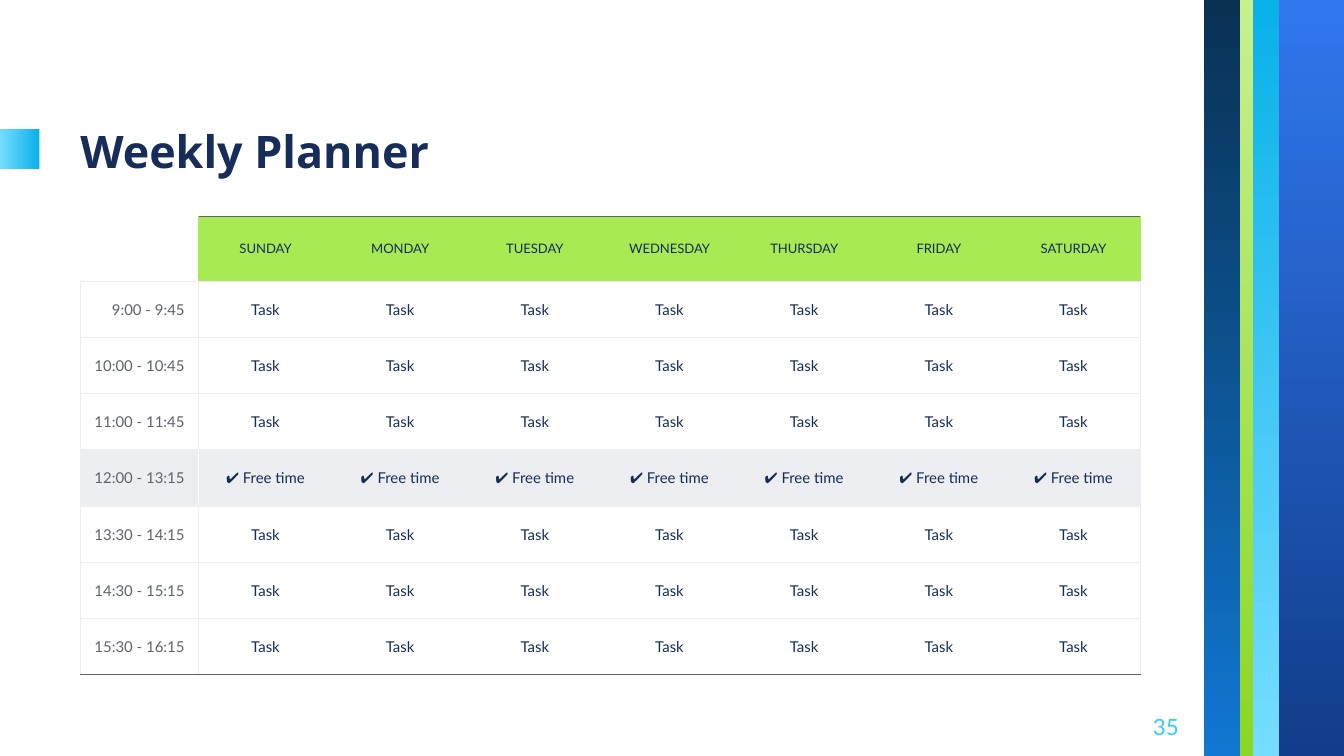
from dataclasses import dataclass

from lxml import etree
from pptx import Presentation
from pptx.dml.color import RGBColor
from pptx.enum.shapes import MSO_SHAPE
from pptx.enum.text import MSO_ANCHOR, PP_ALIGN
from pptx.oxml.ns import qn
from pptx.util import Pt

RECT = MSO_SHAPE.RECTANGLE
LEFT, CENTER, RIGHT = PP_ALIGN.LEFT, PP_ALIGN.CENTER, PP_ALIGN.RIGHT
MIDDLE, BOTTOM = MSO_ANCHOR.MIDDLE, MSO_ANCHOR.BOTTOM

DAYS = ["SUNDAY", "MONDAY", "TUESDAY", "WEDNESDAY",
        "THURSDAY", "FRIDAY", "SATURDAY"]
TIMES = ["9:00 - 9:45", "10:00 - 10:45", "11:00 - 11:45", "12:00 - 13:15",
         "13:30 - 14:15", "14:30 - 15:15", "15:30 - 16:15"]
BREAK_TIME = "12:00 - 13:15"


@dataclass(frozen=True)
class Theme:
    navy: str = "162D5A"
    grey: str = "5E626B"
    pale: str = "EDEEF1"
    white: str = "FFFFFF"
    green: str = "A7EA52"
    cyan: str = "33CCFF"
    blue_fade: tuple = ("3177EE", "113D8A")
    cyan_fade: tuple = ("75DDFF", "09B1E9")
    green_fade: tuple = ("C6F18D", "8AD824")
    deep_fade: tuple = ("1077D2", "093153")
    heading_font: str = "Noto Sans"
    body_font: str = "Lato"
    title_size: float = 24
    number_size: float = 12
    cell_size: float = 8
    day_size: float = 7
    inset: float = 7.2
    rule: float = 0.75


def write(tf, text, *, font, size, color, bold=False, align=LEFT):
    p = tf.paragraphs[0]
    p.alignment = align
    p.font.size = Pt(size)
    if not text:
        return
    r = p.add_run()
    r.text = text
    r.font.name = font
    r.font.size = Pt(size)
    r.font.bold = bold
    r.font.color.rgb = RGBColor.from_string(color)


def set_borders(cell, width, colors):
    """Draw the left, right, top and bottom borders; None hides one."""
    tcPr = cell._tc.get_or_add_tcPr()
    for i, (side, color) in enumerate(zip("LRTB", colors)):
        ln = etree.Element(qn(f"a:ln{side}"), w=str(Pt(width)))
        if color:
            fill = etree.SubElement(ln, qn("a:solidFill"))
            etree.SubElement(fill, qn("a:srgbClr"), val=color)
        else:
            etree.SubElement(ln, qn("a:noFill"))
        tcPr.insert(i, ln)


class Planner:
    def __init__(self, slide, theme):
        self.s = slide
        self.theme = theme

    def bar(self, x, y, w, h, fade, rotation=0):
        """Add a rectangle that fades from top to bottom before rotation."""
        sp = self.s.shapes.add_shape(RECT, Pt(x), Pt(y), Pt(w), Pt(h))
        sp.rotation = rotation
        sp.shadow.inherit = False
        sp.line.fill.background()
        sp.fill.gradient()
        sp.fill.gradient_angle = 270
        for stop, color, position in zip(sp.fill.gradient_stops, fade, (0, 1)):
            stop.color.rgb = RGBColor.from_string(color)
            stop.position = position

    def text(self, x, y, w, h, text, anchor, **style):
        tf = self.s.shapes.add_textbox(Pt(x), Pt(y), Pt(w), Pt(h)).text_frame
        tf.word_wrap = True
        tf.vertical_anchor = anchor
        tf.margin_left = tf.margin_right = Pt(self.theme.inset)
        tf.margin_top = tf.margin_bottom = Pt(self.theme.inset)
        write(tf, text, **style)

    def cell(self, cell, text, fill, borders, **style):
        t = self.theme
        cell.vertical_anchor = MIDDLE
        cell.margin_left = cell.margin_right = Pt(t.inset)
        cell.margin_top = cell.margin_bottom = Pt(t.inset)
        write(cell.text_frame, text, font=t.body_font, **style)
        if fill:
            cell.fill.solid()
            cell.fill.fore_color.rgb = RGBColor.from_string(fill)
        else:
            cell.fill.background()
        set_borders(cell, t.rule, borders)

    def table(self, x, y, widths, heights):
        t = self.theme
        frame = self.s.shapes.add_table(len(heights), len(widths), Pt(x), Pt(y),
                                        Pt(sum(widths)), Pt(sum(heights)))
        table = frame.table
        table.first_row = table.horz_banding = False
        for column, width in zip(table.columns, widths):
            column.width = Pt(width)
        for row, height in zip(table.rows, heights):
            row.height = Pt(height)

        last = len(widths) - 1
        for c, day in enumerate([""] + DAYS):
            borders = (t.green if c == 1 else None,
                       t.green if c in (0, last) else None,
                       t.grey if c else None, t.pale)
            self.cell(table.cell(0, c), day, t.green if c else None, borders,
                      size=t.day_size, color=t.navy, align=CENTER)

        for r, time in enumerate(TIMES, start=1):
            is_break = time == BREAK_TIME
            fill = t.pale if is_break else None
            divider = t.white if is_break else t.pale
            bottom = t.grey if r == len(TIMES) else t.pale
            entry = "✔ Free time" if is_break else "Task"
            self.cell(table.cell(r, 0), time, fill,
                      (t.pale, divider, t.pale, bottom),
                      size=t.cell_size, color=t.grey, align=RIGHT)
            for c in range(1, last + 1):
                borders = (divider if c == 1 else None,
                           t.pale if c == last else None, t.pale, bottom)
                self.cell(table.cell(r, c), entry, fill, borders,
                          size=t.cell_size, color=t.navy, align=CENTER)


def main():
    prs = Presentation()
    prs.slide_width, prs.slide_height = Pt(720), Pt(405)
    theme = Theme()
    planner = Planner(prs.slides.add_slide(prs.slide_layouts[6]), theme)

    planner.bar(685, 0, 35, 405, theme.blue_fade)
    planner.bar(671, 0, 14.2, 405, theme.cyan_fade, rotation=180)
    planner.bar(664.3, 0, 7, 405, theme.green_fade)
    planner.bar(645, 0, 19.3, 405, theme.deep_fade, rotation=180)
    planner.bar(0, 69.2, 21.2, 21.2, theme.cyan_fade, rotation=270)

    planner.text(36, 44.6, 417.6, 57.6, "Weekly Planner", BOTTOM,
                 font=theme.heading_font, size=theme.title_size,
                 color=theme.navy, bold=True)
    planner.text(595.4, 373.9, 43.2, 31, "35", MIDDLE,
                 font=theme.body_font, size=theme.number_size,
                 color=theme.cyan, align=RIGHT)
    planner.table(43.2, 115.9, [63] + [72.15] * len(DAYS),
                  [34.7] + [30.15] * len(TIMES))
    prs.save("out.pptx")


if __name__ == "__main__":
    main()
